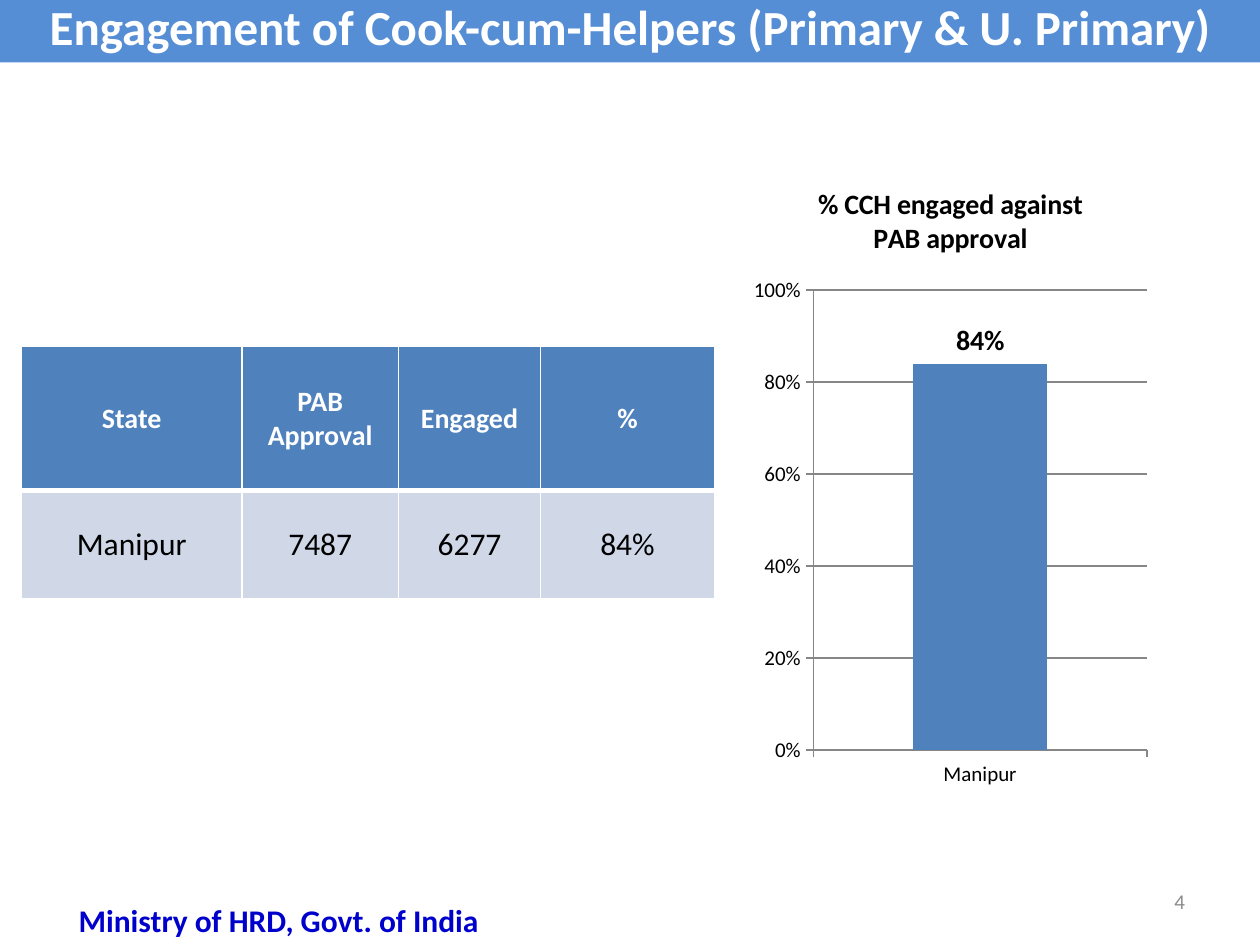
import pptx
import pptx.chart.data
import pptx.dml.color
import pptx.enum.chart
import pptx.enum.text
import pptx.oxml
import pptx.oxml.ns
import pptx.util
from pptx.util import Cm

COLORS = {
    "banner": "558ED5",
    "accent": "4F81BD",
    "body row": "D0D8E8",
    "white": "FFFFFF",
    "black": "000000",
    "axis": "868686",
    "number": "8C8C8C",
    "ministry": "0000CC",
}
FONT = "Calibri"
ALIGN = pptx.enum.text.PP_ALIGN
MIDDLE = pptx.enum.text.MSO_ANCHOR.MIDDLE


def rgb(name):
    return pptx.dml.color.RGBColor.from_string(COLORS[name])


def set_font(font, size, color, bold=False):
    font.name = FONT
    font.size = pptx.util.Pt(size)
    font.bold = bold
    font.color.rgb = rgb(color)


def fill_with(target, color):
    target.fill.solid()
    target.fill.fore_color.rgb = rgb(color)


def place(shape, box):
    shape.left, shape.top, shape.width, shape.height = box


def write(text_frame, text, size, color, bold=False, align=ALIGN.CENTER):
    text_frame.text = text
    text_frame.word_wrap = True
    paragraph = text_frame.paragraphs[0]
    paragraph.alignment = align
    set_font(paragraph.font, size, color, bold)
    return paragraph


def add_banner(slide, box):
    title = slide.shapes.title
    place(title, box)
    fill_with(title, "banner")
    title.text_frame.auto_size = pptx.enum.text.MSO_AUTO_SIZE.NONE
    title.text_frame.vertical_anchor = MIDDLE
    paragraph = write(title.text_frame, "Engagement of Cook-cum-Helpers (Primary & U. Primary)",
                      28, "white", bold=True)
    paragraph.line_spacing = 0.9


def set_borders(cell, bottom_width):
    """Draw white borders; they come before the fill in the cell properties."""
    properties = cell._tc.get_or_add_tcPr()
    widths = {"lnL": 1, "lnR": 1, "lnT": 1, "lnB": bottom_width}
    for index, (tag, width) in enumerate(widths.items()):
        properties.insert(index, pptx.oxml.parse_xml(
            f'<a:{tag} {pptx.oxml.ns.nsdecls("a")} w="{pptx.util.Pt(width)}">'
            f'<a:solidFill><a:srgbClr val="{COLORS["white"]}"/></a:solidFill></a:{tag}>'))


def add_engagement_table(slide, box):
    rows = [("State", "PAB Approval", "Engaged", "%"),
            ("Manipur", "7487", "6277", "84%")]
    # fill, font size, font colour, bold, bottom border
    styles = [("accent", 16, "white", True, 3),
              ("body row", 18, "black", False, 1)]
    table = slide.shapes.add_table(len(rows), len(rows[0]), *box).table
    for column, width in zip(table.columns, (4.45, 3.15, 2.87, 3.5)):
        column.width = Cm(width)
    for row, height in zip(table.rows, (2.9, 2.18)):
        row.height = Cm(height)

    for row, texts, style in zip(table.rows, rows, styles):
        fill, size, color, bold, bottom_width = style
        for cell, text in zip(row.cells, texts):
            cell.margin_left = cell.margin_right = 0
            cell.margin_top = cell.margin_bottom = 0
            cell.vertical_anchor = MIDDLE
            fill_with(cell, fill)
            set_borders(cell, bottom_width)
            write(cell.text_frame, text, size, color, bold)


def add_engagement_chart(slide, box):
    data = pptx.chart.data.CategoryChartData(number_format="0%")
    data.categories = ["Manipur"]
    data.add_series("Series 1", [0.84])
    chart = slide.shapes.add_chart(
        pptx.enum.chart.XL_CHART_TYPE.COLUMN_CLUSTERED, *box, data).chart
    set_font(chart.font, 18, "black")
    chart.has_legend = False

    # Heading
    chart.has_title = True
    heading = chart.chart_title.text_frame
    heading.text = "% CCH engaged against PAB approval"
    set_font(heading.paragraphs[0].font, 16, "black", bold=True)

    # Axes
    for axis in (chart.category_axis, chart.value_axis):
        set_font(axis.tick_labels.font, 12, "black")
        axis.major_tick_mark = pptx.enum.chart.XL_TICK_MARK.OUTSIDE
        axis.minor_tick_mark = pptx.enum.chart.XL_TICK_MARK.NONE
        axis.format.line.color.rgb = rgb("axis")
    value_axis = chart.value_axis
    value_axis.minimum_scale, value_axis.maximum_scale = 0, 1
    value_axis.major_unit = 0.2
    value_axis.has_major_gridlines = True
    value_axis.major_gridlines.format.line.color.rgb = rgb("axis")
    value_axis.tick_labels.number_format = "0%"
    value_axis.tick_labels.number_format_is_linked = False

    # Column and its label
    plot = chart.plots[0]
    plot.gap_width = 150
    plot.vary_by_categories = False
    fill_with(plot.series[0].format, "accent")
    plot.has_data_labels = True
    labels = plot.data_labels
    labels.show_value = True
    labels.number_format = "0%"
    labels.number_format_is_linked = False
    labels.position = pptx.enum.chart.XL_LABEL_POSITION.OUTSIDE_END
    set_font(labels.font, 16, "black", bold=True)


def add_footer(slide, box):
    left, top, width, height = box
    ministry = slide.shapes.add_textbox(left, top + Cm(0.38), Cm(9.96), height)
    write(ministry.text_frame, "Ministry of HRD, Govt. of India", 18, "ministry", bold=True)

    number_width = Cm(5.92)
    number = slide.shapes.add_textbox(left + width - number_width, top, number_width, height)
    number.text_frame.vertical_anchor = MIDDLE
    write(number.text_frame, "4", 12, "number", align=ALIGN.RIGHT)


def main():
    presentation = pptx.Presentation()
    presentation.slide_width = Cm(25.4)
    presentation.slide_height = Cm(19.05)
    slide = presentation.slides.add_slide(presentation.slide_layouts[5])

    add_banner(slide, (0, Cm(-0.08), presentation.slide_width, Cm(1.34)))
    add_engagement_table(slide, (Cm(0.43), Cm(6.99), Cm(13.97), Cm(5.08)))
    add_engagement_chart(slide, (Cm(15.03), Cm(3.23), Cm(8.26), Cm(12.9)))
    add_footer(slide, (Cm(0.64), Cm(17.65), Cm(23.5), Cm(1.02)))

    presentation.save("out.pptx")


if __name__ == "__main__":
    main()
